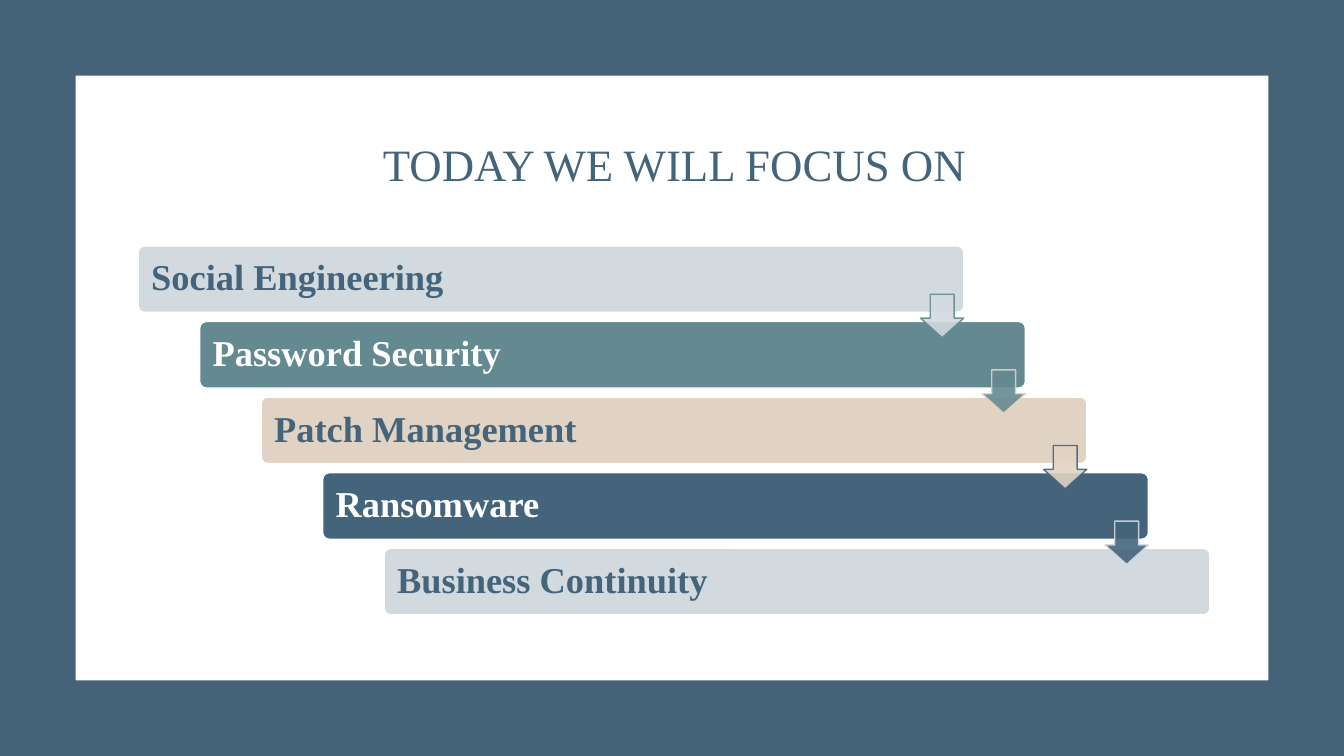
import pptx
import pptx.util
import pptx.dml.color
import pptx.enum.shapes
import pptx.enum.text
import pptx.oxml
import pptx.oxml.ns
from dataclasses import dataclass

TITLE = "TODAY WE WILL FOCUS ON"
# topic, bar colour, text colour (names of theme colours)
TOPICS = [
    ("Social Engineering", "mist", "navy"),
    ("Password Security", "teal", "white"),
    ("Patch Management", "sand", "navy"),
    ("Ransomware", "navy", "white"),
    ("Business Continuity", "mist", "navy"),
]


@dataclass(frozen=True)
class Theme:
    frame: str = "456378"
    navy: str = "43647B"
    teal: str = "648991"
    sand: str = "E1D3C3"
    mist: str = "D2D9DF"
    white: str = "FFFFFF"
    font: str = "Times New Roman"
    title: int = 32
    label: int = 26
    alpha: int = 89


THEME = Theme()
KINDS = pptx.enum.shapes.MSO_SHAPE
ALIGN = pptx.enum.text.PP_ALIGN
MIDDLE = pptx.enum.text.MSO_ANCHOR.MIDDLE
Inches = pptx.util.Inches

WIDE, HIGH, EDGE = 13.33, 7.5, 0.75
BAR_LEFT, BAR_TOP, BAR_WIDE, BAR_HIGH = 1.37, 2.44, 8.19, 0.66
STEP_X, STEP_Y = 0.61, 0.75
ARROW, DROP = 0.43, 0.48


def tint(name):
    return pptx.dml.color.RGBColor.from_string(getattr(THEME, name))


def draw(slide, kind, box, fill, line=None):
    shape = slide.shapes.add_shape(kind, *map(Inches, box))
    shape.shadow.inherit = False
    shape.fill.solid()
    shape.fill.fore_color.rgb = tint(fill)
    if line:
        shape.line.color.rgb = tint(line)
        shape.line.width = pptx.util.Pt(1)
    else:
        shape.line.fill.background()
    return shape


def fade(shape):
    """Make the fill and line of a shape slightly see-through."""
    for color in shape.element.spPr.iter(pptx.oxml.ns.qn("a:srgbClr")):
        alpha = pptx.oxml.parse_xml(
            f'<a:alpha {pptx.oxml.ns.nsdecls("a")} val="{THEME.alpha * 1000}"/>')
        color.append(alpha)


def write(shape, text, size, color, align, bold, side):
    frame = shape.text_frame
    frame.word_wrap = True
    frame.auto_size = pptx.enum.text.MSO_AUTO_SIZE.NONE
    frame.vertical_anchor = MIDDLE
    frame.margin_left = frame.margin_right = Inches(side)
    frame.margin_top = frame.margin_bottom = Inches(0.05)
    para = frame.paragraphs[0]
    para.alignment = align
    para.line_spacing = 0.9
    run = para.add_run()
    run.text = text
    run.font.name = THEME.font
    run.font.size = pptx.util.Pt(size)
    run.font.bold = bold
    run.font.color.rgb = tint(color)


def add_title(slide):
    title = slide.shapes.title
    title.left, title.top = Inches(1.5), Inches(1.17)
    title.width, title.height = Inches(10.38), Inches(0.98)
    write(title, TITLE, THEME.title, "navy", ALIGN.CENTER, False, 0.1)
    # Bring the title in front of the panel.
    title.element.getparent().append(title.element)


def add_steps(slide):
    spots = [(BAR_LEFT + i * STEP_X, BAR_TOP + i * STEP_Y)
             for i in range(len(TOPICS))]
    for (text, fill, ink), (left, top) in zip(TOPICS, spots):
        bar = draw(slide, KINDS.ROUNDED_RECTANGLE,
                   (left, top, BAR_WIDE, BAR_HIGH), fill, "white")
        bar.adjustments[0] = 0.1
        write(bar, text, THEME.label, ink, ALIGN.LEFT, True, 0.11)

    # Each arrow takes its fill from its bar and its line from the next.
    for here, after, (left, top) in zip(TOPICS, TOPICS[1:], spots):
        box = (left + BAR_WIDE - ARROW, top + DROP, ARROW, ARROW)
        arrow = draw(slide, KINDS.DOWN_ARROW, box, here[1], after[1])
        arrow.adjustments[0] = 0.55
        arrow.adjustments[1] = 0.45
        fade(arrow)


def main():
    deck = pptx.Presentation()
    deck.slide_width, deck.slide_height = Inches(WIDE), Inches(HIGH)
    slide = deck.slides.add_slide(deck.slide_layouts[5])
    draw(slide, KINDS.RECTANGLE, (0, 0, WIDE, HIGH), "frame")
    draw(slide, KINDS.RECTANGLE,
         (EDGE, EDGE, WIDE - 2 * EDGE, HIGH - 2 * EDGE), "white")
    add_title(slide)
    add_steps(slide)
    deck.save("out.pptx")


if __name__ == "__main__":
    main()
